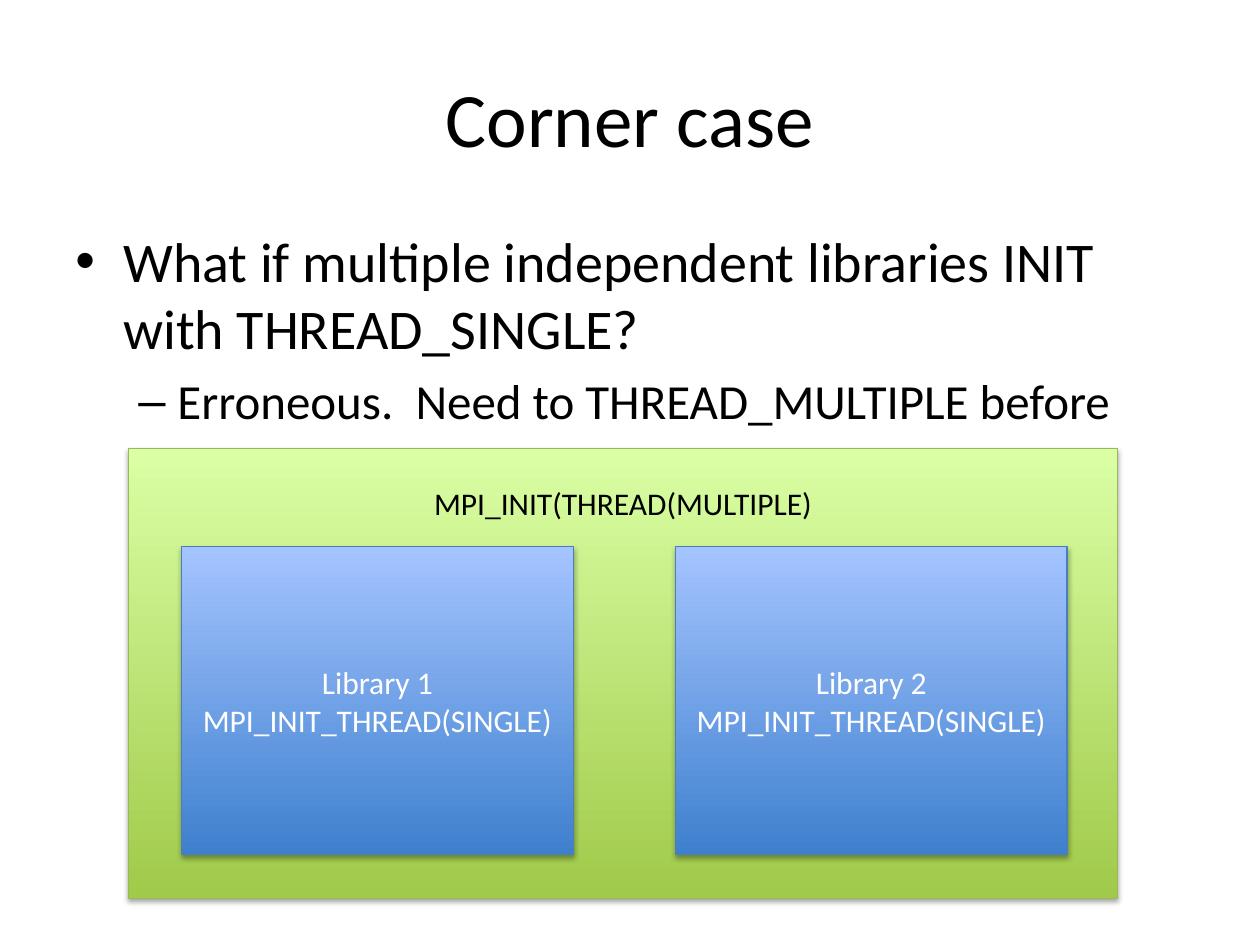
from dataclasses import dataclass

from lxml import etree
from pptx import Presentation
from pptx.dml.color import RGBColor
from pptx.enum.shapes import MSO_SHAPE
from pptx.enum.text import MSO_ANCHOR, PP_ALIGN
from pptx.oxml.ns import qn
from pptx.util import Inches, Pt

RECT = MSO_SHAPE.RECTANGLE
TOP, MIDDLE = MSO_ANCHOR.TOP, MSO_ANCHOR.MIDDLE
LEFT, CENTER = PP_ALIGN.LEFT, PP_ALIGN.CENTER

BLACK = RGBColor(0x00, 0x00, 0x00)
WHITE = RGBColor(0xFF, 0xFF, 0xFF)
GREEN_DARK = RGBColor(0xA0, 0xCA, 0x4A)
GREEN_LIGHT = RGBColor(0xDA, 0xFF, 0xA5)
GREEN_LINE = RGBColor(0x98, 0xB9, 0x55)
BLUE_DARK = RGBColor(0x3F, 0x80, 0xCE)
BLUE_LIGHT = RGBColor(0xA4, 0xC4, 0xFF)
BLUE_LINE = RGBColor(0x4B, 0x7E, 0xBC)


@dataclass
class Bullet:
    text: str
    char: str
    size: int
    margin: float
    hanging: float
    level: int


@dataclass
class Panel:
    left: float
    top: float
    width: float
    height: float
    lines: list[str]
    bottom_color: RGBColor
    top_color: RGBColor
    line_color: RGBColor
    text_color: RGBColor
    anchor: MSO_ANCHOR = MIDDLE
    inset: float = 0.05


def write(p, text: str, size: int, color: RGBColor, align=CENTER) -> None:
    p.alignment = align
    r = p.add_run()
    r.text = text
    for name, value in {"name": "Calibri", "size": Pt(size)}.items():
        setattr(r.font, name, value)
    r.font.color.rgb = color


def add_text_box(slide, left: float, top: float, width: float, height: float, anchor):
    box = slide.shapes.add_textbox(Inches(left), Inches(top), Inches(width), Inches(height))
    tf = box.text_frame
    tf.word_wrap = True
    tf.vertical_anchor = anchor
    return tf


def add_bullet(p, bullet: Bullet) -> None:
    write(p, bullet.text, bullet.size, BLACK, LEFT)
    p.level = bullet.level
    p.space_before = Pt(bullet.size * 0.2)
    pPr = p._p.get_or_add_pPr()
    pPr.set("marL", str(Inches(bullet.margin)))
    pPr.set("indent", str(-Inches(bullet.hanging)))
    etree.SubElement(pPr, qn("a:buFont"), typeface="Arial")
    etree.SubElement(pPr, qn("a:buChar"), char=bullet.char)


def add_shadow(sp) -> None:
    sp.shadow.inherit = False
    effects = sp._element.spPr.find(qn("a:effectLst"))
    shadow = etree.SubElement(effects, qn("a:outerShdw"), blurRad=str(Pt(3.1)),
                              dist=str(Pt(1.8)), dir="5400000", rotWithShape="0")
    color = etree.SubElement(shadow, qn("a:srgbClr"), val="000000")
    etree.SubElement(color, qn("a:alpha"), val="35000")


def add_panel(slide, panel: Panel) -> None:
    sp = slide.shapes.add_shape(RECT, Inches(panel.left), Inches(panel.top),
                                Inches(panel.width), Inches(panel.height))
    sp.fill.gradient()
    sp.fill.gradient_angle = 90
    for stop, color in zip(sp.fill.gradient_stops, (panel.bottom_color, panel.top_color)):
        stop.color.rgb = color
    sp.line.color.rgb = panel.line_color
    sp.line.width = Pt(0.75)
    add_shadow(sp)
    tf = sp.text_frame
    tf.word_wrap = True
    tf.vertical_anchor = panel.anchor
    tf.margin_top = Inches(panel.inset)
    for i, line in enumerate(panel.lines):
        p = tf.paragraphs[0] if i == 0 else tf.add_paragraph()
        write(p, line, 18, panel.text_color)


BULLETS = [
    Bullet("What if multiple independent libraries INIT with THREAD_SINGLE?",
           "•", 32, 0.38, 0.38, 0),
    Bullet("Erroneous.  Need to THREAD_MULTIPLE before", "–", 28, 0.81, 0.31, 1),
]

PROGRAM = Panel(1.02, 3.56, 7.85, 3.57, ["MPI_INIT(THREAD(MULTIPLE)"],
                GREEN_DARK, GREEN_LIGHT, GREEN_LINE, BLACK, TOP, 0.28)
LIBRARIES = [
    Panel(1.44 + 3.92 * i, 4.34, 3.11, 2.44,
          [f"Library {i + 1}", "MPI_INIT_THREAD(SINGLE)"],
          BLUE_DARK, BLUE_LIGHT, BLUE_LINE, WHITE)
    for i in range(2)
]


def main() -> None:
    prs = Presentation()
    prs.slide_width, prs.slide_height = Inches(10), Inches(7.5)
    slide = prs.slides.add_slide(prs.slide_layouts[6])

    # Title
    tf = add_text_box(slide, 0.5, 0.3, 9, 1.25, MIDDLE)
    write(tf.paragraphs[0], "Corner case", 44, BLACK)

    # Question and answer
    tf = add_text_box(slide, 0.5, 1.75, 9, 4.95, TOP)
    for i, bullet in enumerate(BULLETS):
        add_bullet(tf.paragraphs[0] if i == 0 else tf.add_paragraph(), bullet)

    # Program with its two libraries
    for panel in [PROGRAM, *LIBRARIES]:
        add_panel(slide, panel)

    prs.save("out.pptx")


if __name__ == "__main__":
    main()
